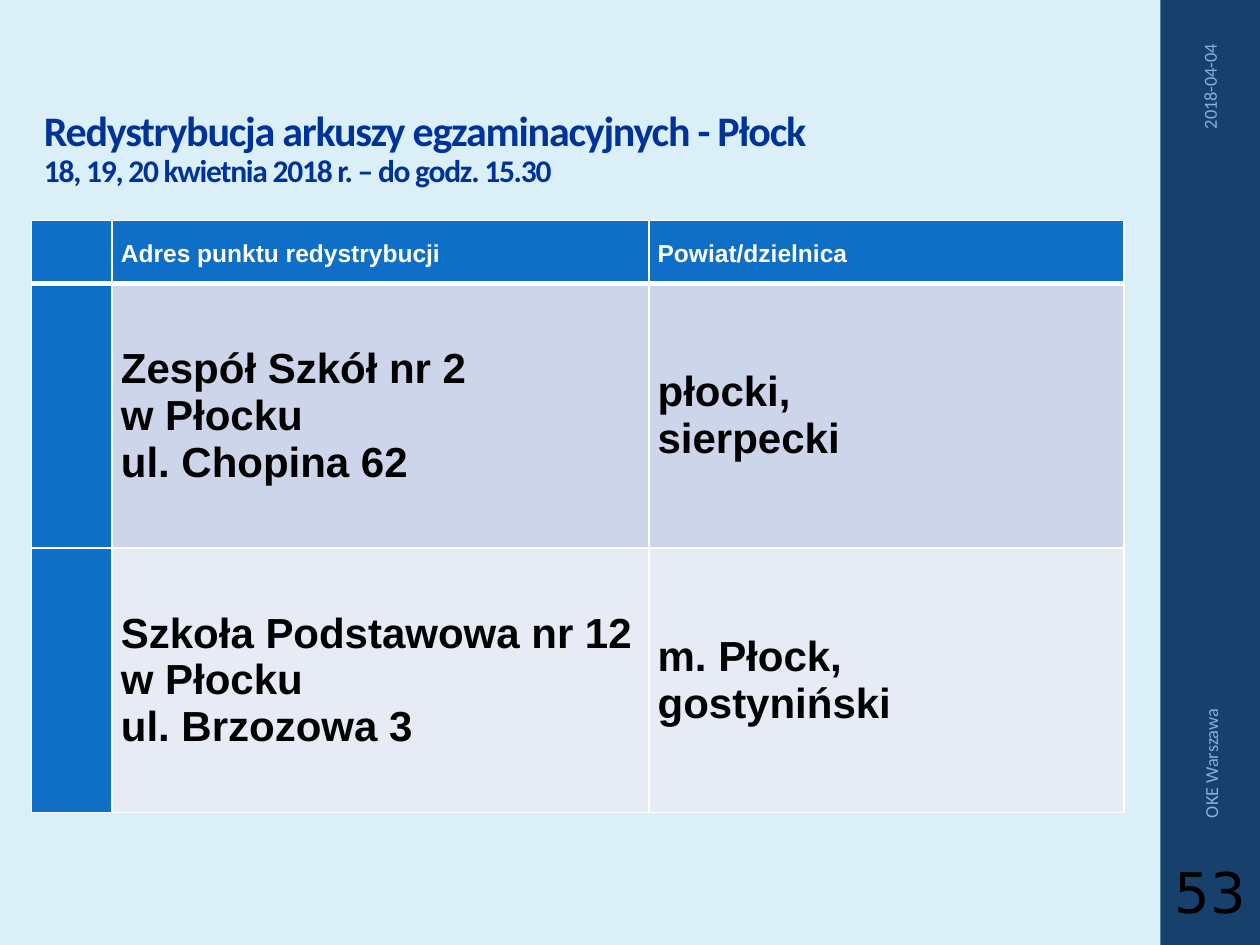
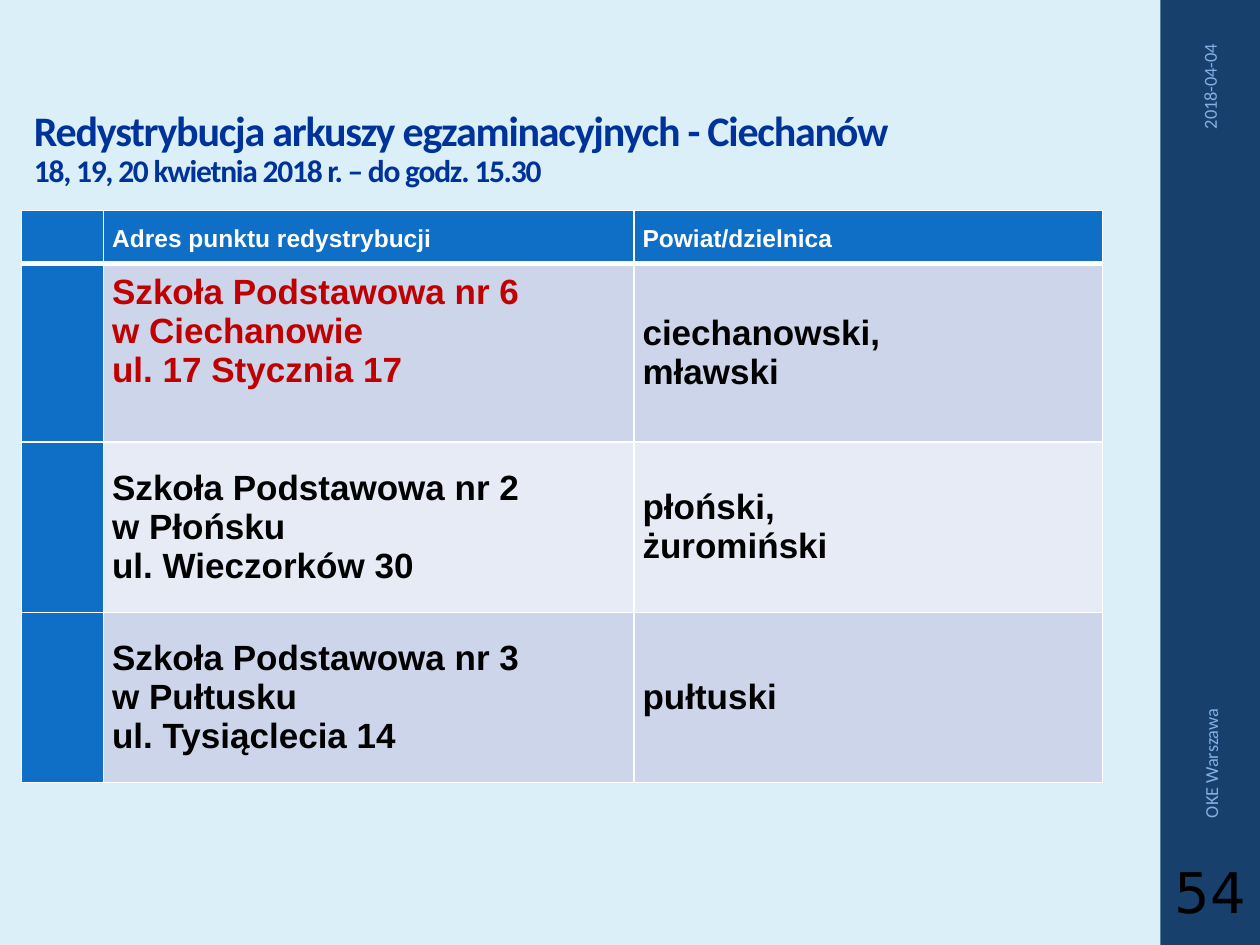
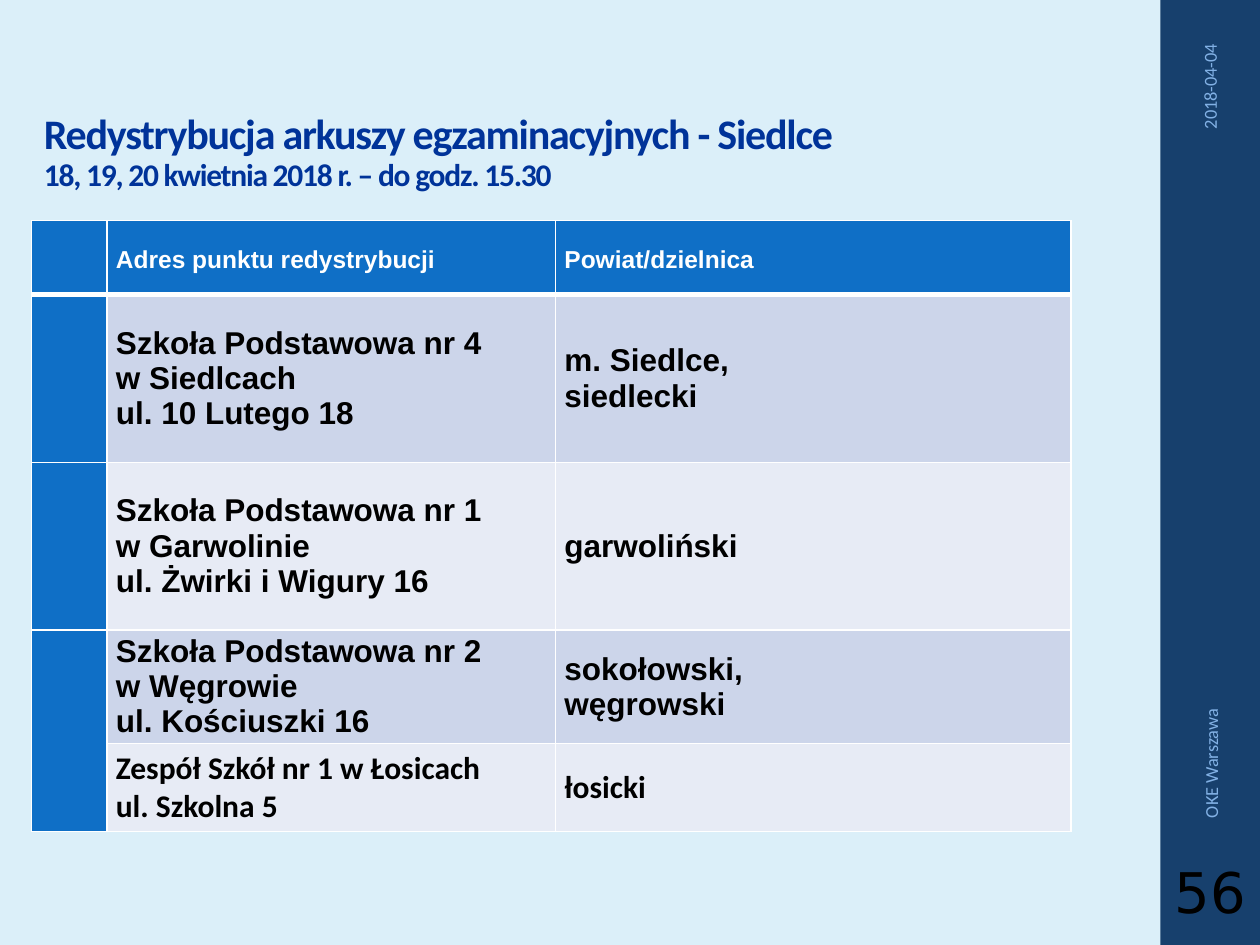
from dataclasses import dataclass

from lxml.etree import SubElement
from pptx import Presentation
from pptx.dml.color import RGBColor
from pptx.enum.shapes import MSO_SHAPE as Shape
from pptx.enum.text import MSO_ANCHOR as Anchor, PP_ALIGN as Align
from pptx.oxml.ns import qn
from pptx.util import Inches, Pt


@dataclass(frozen=True)
class Theme:
    background: str = "DBEFF9"
    band: str = "17406D"
    title: str = "003399"
    header: str = "0F6FC6"
    stripes: tuple = ("CCD5EA", "E7EBF5")
    white: str = "FFFFFF"
    ink: str = "000000"
    alert: str = "C00000"
    footer: str = "82B1E5"
    heading_font: str = "Calibri"
    body_font: str = "Arial"
    number_font: str = "DejaVu Sans"
    title_size: float = 24
    subtitle_size: float = 18
    header_size: float = 14
    footer_size: float = 10.5
    number_size: float = 32


@dataclass(frozen=True)
class School:
    height: float
    address: tuple
    districts: tuple
    color: str = Theme.ink
    font: str = Theme.body_font
    space_below: float = 0
    joins_above: bool = False


@dataclass(frozen=True)
class City:
    name: str
    number: int
    title_at: tuple
    table_at: tuple
    columns: tuple
    header_height: float
    size: float
    schools: tuple


DATES = "18, 19, 20 kwietnia 2018 r. – do godz. 15.30"
HEADINGS = ("Adres punktu redystrybucji", "Powiat/dzielnica")

CITIES = (
    City("Płock", 53, (0.25, 0.3, 8.67, 1.25), (0.25, 1.75), (0.64, 4.26, 3.77), 0.5, 24, (
        School(2.1, ("Zespół Szkół nr 2", "w Płocku", "ul. Chopina 62"),
               ("płocki,", "sierpecki")),
        School(2.1, ("Szkoła Podstawowa nr 12", "w Płocku", "ul. Brzozowa 3"),
               ("m. Płock,", "gostyniński")),
    )),
    City("Ciechanów", 54, (0.17, 0.3, 8.75, 1.25), (0.17, 1.67), (0.65, 4.21, 3.72), 0.42, 20, (
        School(1.42, ("Szkoła Podstawowa nr 6", "w Ciechanowie", "ul. 17 Stycznia 17"),
               ("ciechanowski,", "mławski"), color=Theme.alert, space_below=0.34),
        School(1.35, ("Szkoła Podstawowa nr 2", "w Płońsku", "ul. Wieczorków 30"),
               ("płoński,", "żuromiński")),
        School(1.35, ("Szkoła Podstawowa nr 3", "w Pułtusku", "ul. Tysiąclecia 14"),
               ("pułtuski",)),
    )),
    City("Siedlce", 56, (0.25, 0.33, 8.75, 1.25), (0.25, 1.75), (0.6, 3.56, 4.09), 0.59, 18, (
        School(1.33, ("Szkoła Podstawowa nr 4", "w Siedlcach", "ul. 10 Lutego 18"),
               ("m. Siedlce,", "siedlecki")),
        School(1.33, ("Szkoła Podstawowa nr 1", "w Garwolinie", "ul. Żwirki i Wigury 16"),
               ("garwoliński",)),
        School(0.7, ("Szkoła Podstawowa nr 2", "w Węgrowie", "ul. Kościuszki 16"),
               ("sokołowski,", "węgrowski")),
        School(0.7, ("Zespół Szkół nr 1 w Łosicach", "ul. Szkolna 5"), ("łosicki",),
               font=Theme.heading_font, joins_above=True),
    )),
)


def write(frame, lines, *, sizes, font, color, bold=False, align=Align.LEFT,
          leading=None, tracking=None, breaks=False):
    """Write lines as paragraphs, or as one paragraph with line breaks."""
    paragraph = frame.paragraphs[0]
    for index, line in enumerate(lines):
        if index and breaks:
            paragraph.add_line_break()
        elif index:
            paragraph = frame.add_paragraph()
        paragraph.alignment = align
        if leading:
            paragraph.line_spacing = leading
        run = paragraph.add_run()
        run.text = line
        run.font.size = Pt(sizes[min(index, len(sizes) - 1)])
        run.font.name = font
        run.font.bold = bold
        run.font.color.rgb = RGBColor.from_string(color)
        if tracking:
            run._r.get_or_add_rPr().set("spc", str(round(tracking * 100)))


class Deck:
    """Holds the style and the current slide."""

    def __init__(self, theme):
        """Start a 4:3 presentation with the shared background."""
        self.theme = theme
        self.show = Presentation()
        self.show.slide_width, self.show.slide_height = Inches(10), Inches(7.5)
        self.fill(self.show.slide_master.background, theme.background)
        self.slide = None

    def fill(self, target, color):
        """Give the target a solid fill."""
        target.fill.solid()
        target.fill.fore_color.rgb = RGBColor.from_string(color)

    def label(self, box, lines, *, anchor=Anchor.MIDDLE, rotation=0, side=0.1, **style):
        """Add a text box."""
        holder = self.slide.shapes.add_textbox(*map(Inches, box))
        holder.rotation = rotation
        frame = holder.text_frame
        frame.word_wrap = True
        frame.vertical_anchor = anchor
        frame.margin_left = frame.margin_right = Inches(side)
        write(frame, lines, **style)

    def page(self, number):
        """Start a slide with its side band, date, footer and number."""
        theme = self.theme
        self.slide = self.show.slides.add_slide(self.show.slide_layouts[6])
        band = self.slide.shapes.add_shape(
            Shape.RECTANGLE, *map(Inches, (9.21, 0, 0.79, 7.5)))
        band.shadow.inherit = False
        self.fill(band, theme.band)
        band.line.fill.background()
        footer = dict(rotation=270, sizes=(theme.footer_size,),
                      font=theme.heading_font, color=theme.footer)
        self.label((8.56, 1.14, 2.08, 0.3), ("2018-04-04",), align=Align.RIGHT, **footer)
        self.label((7.65, 4.48, 3.92, 0.3), ("OKE Warszawa",), **footer)
        self.label((9.23, 6.75, 0.75, 0.65), (str(number),), side=0.03,
                   align=Align.CENTER, sizes=(theme.number_size,),
                   font=theme.number_font, color=theme.ink)

    def title(self, city):
        """Add the city heading with the dates below it."""
        theme = self.theme
        self.label(city.title_at,
                   (f"Redystrybucja arkuszy egzaminacyjnych - {city.name}", DATES),
                   anchor=Anchor.BOTTOM, sizes=(theme.title_size, theme.subtitle_size),
                   font=theme.heading_font, color=theme.title, bold=True,
                   leading=0.9, tracking=-0.7, breaks=True)

    def borders(self, cell, row):
        """Draw white cell borders, thicker under the header row."""
        properties = cell._tc.get_or_add_tcPr()
        widths = {"lnL": 1, "lnR": 1, "lnT": 3 if row == 1 else 1, "lnB": 3 if row == 0 else 1}
        for side, width in widths.items():
            edge = SubElement(properties, qn(f"a:{side}"), w=str(Pt(width)))
            solid = SubElement(edge, qn("a:solidFill"))
            SubElement(solid, qn("a:srgbClr"), val=self.theme.white)

    def cell(self, cell, row, backdrop, lines=(), space_below=0, **style):
        """Format one table cell and write its lines."""
        self.borders(cell, row)
        self.fill(cell, backdrop)
        cell.vertical_anchor = Anchor.MIDDLE
        cell.margin_left = cell.margin_right = Inches(0.07)
        cell.margin_top, cell.margin_bottom = 0, Inches(space_below)
        if lines:
            write(cell.text_frame, lines, bold=True, **style)

    def table(self, city):
        """Add the table of redistribution points."""
        theme = self.theme
        heights = [city.header_height] + [school.height for school in city.schools]
        size = sum(city.columns), sum(heights)
        grid = self.slide.shapes.add_table(
            len(heights), len(city.columns), *map(Inches, city.table_at + size)).table
        grid.first_row = grid.horz_banding = False
        for column, width in zip(grid.columns, city.columns):
            column.width = Inches(width)
        for row, height in enumerate(heights):
            grid.rows[row].height = Inches(height)
            self.cell(grid.cell(row, 0), row, theme.header)
        for column, heading in enumerate(HEADINGS, 1):
            self.cell(grid.cell(0, column), 0, theme.header, (heading,), leading=1.15,
                      sizes=(theme.header_size,), font=theme.body_font, color=theme.white)
        for row, school in enumerate(city.schools, 1):
            stripe = theme.stripes[(row - 1) % 2]
            style = dict(sizes=(city.size,), font=school.font)
            self.cell(grid.cell(row, 1), row, stripe, school.address,
                      school.space_below, color=school.color, **style)
            self.cell(grid.cell(row, 2), row, stripe, school.districts,
                      color=theme.ink, **style)
            if school.joins_above:
                grid.cell(row - 1, 0).merge(grid.cell(row, 0))


def main():
    """Build one slide for each city."""
    deck = Deck(Theme())
    for city in CITIES:
        deck.page(city.number)
        deck.title(city)
        deck.table(city)
    deck.show.save("out.pptx")


if __name__ == "__main__":
    main()
